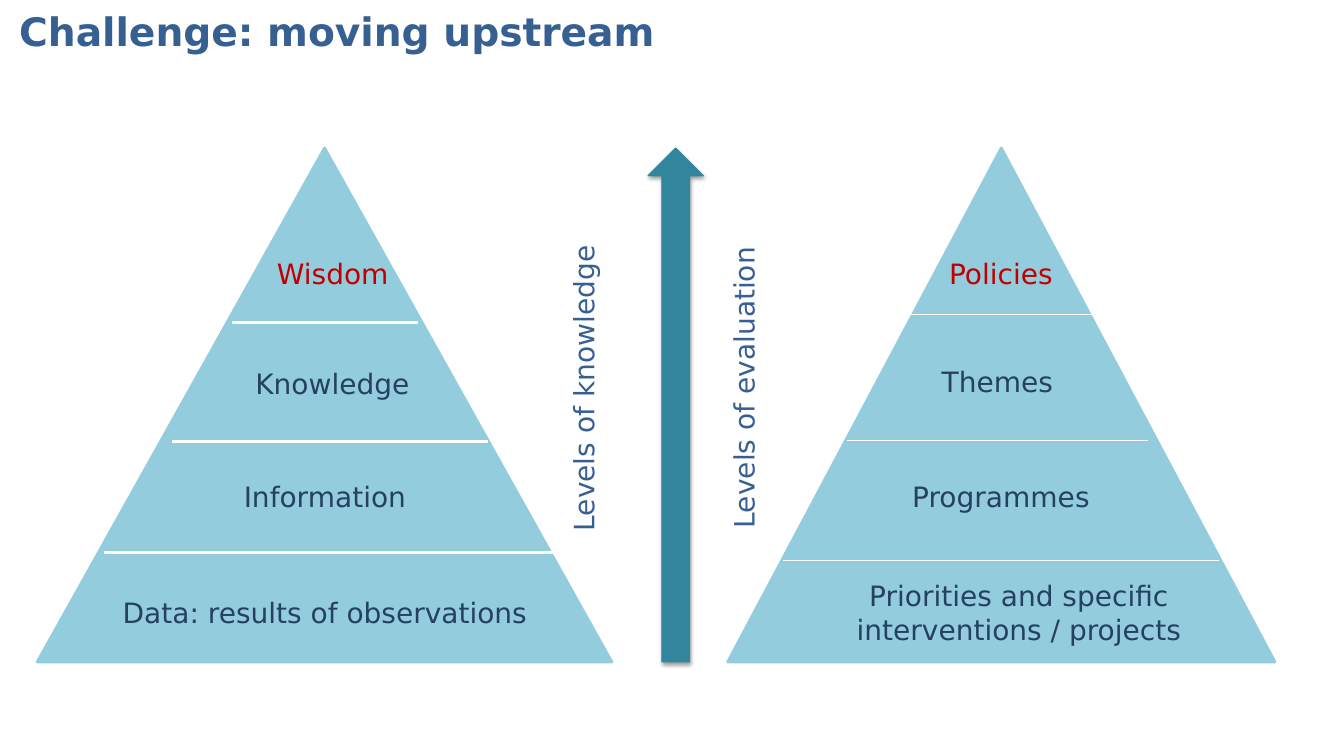
from dataclasses import dataclass
from typing import Any, NamedTuple

from lxml.etree import SubElement
from pptx import Presentation
from pptx.dml.color import RGBColor
from pptx.enum.shapes import MSO_CONNECTOR as Connector, MSO_SHAPE as Shape
from pptx.enum.text import MSO_ANCHOR as Anchor, MSO_AUTO_SIZE as AutoSize, PP_ALIGN as Align
from pptx.oxml.ns import qn
from pptx.util import Cm, Pt


@dataclass(frozen=True)
class Theme:
    font: str = "DejaVu Sans"
    title_size: float = 28
    label_size: float = 20
    heading: str = "376092"
    label: str = "254061"
    peak: str = "C00000"
    pyramid: str = "93CDDD"
    arrow: str = "31859C"
    divider: str = "FFFFFF"
    shadow: str = "000000"


THEME = Theme()
PYRAMID_TOP, PYRAMID_HEIGHT = 3.73, 12.95
LABEL_HEIGHT = 1.12


class Box(NamedTuple):
    left: float
    top: float
    width: float
    height: float = LABEL_HEIGHT

    def lengths(self) -> tuple[Cm, ...]:
        return tuple(Cm(value) for value in self)


class Level(NamedTuple):
    text: str
    box: Box
    color: str = THEME.label


class Divider(NamedTuple):
    start: float
    end: float
    y: float


@dataclass(frozen=True)
class Pyramid:
    left: float
    width: float
    divider_weight: float
    dividers: tuple[Divider, ...]
    levels: tuple[Level, ...]
    axis: Level


KNOWLEDGE = Pyramid(
    left=0.94, width=14.48, divider_weight=1.75,
    dividers=(Divider(5.84, 10.54, 8.13), Divider(4.34, 12.29, 11.13),
              Divider(2.62, 14.15, 13.92)),
    levels=(
        Level("Wisdom", Box(5.16, 6.35, 6.45), THEME.peak),
        Level("Knowledge", Box(4.47, 9.12, 7.82)),
        Level("Information", Box(3.07, 11.96, 10.24)),
        Level("Data: results of observations", Box(2.46, 14.88, 11.46)),
    ),
    axis=Level("Levels of knowledge", Box(14.15, 3.12, 1.37, 10.52), THEME.heading),
)
EVALUATION = Pyramid(
    left=18.34, width=13.79, divider_weight=0.75,
    dividers=(Divider(22.81, 27.53, 7.92), Divider(21.34, 28.93, 11.1),
              Divider(19.74, 30.73, 14.12)),
    levels=(
        Level("Policies", Box(22.81, 6.35, 4.83), THEME.peak),
        Level("Themes", Box(22.2, 9.07, 5.87)),
        Level("Programmes", Box(21.39, 11.96, 7.67)),
        Level("Priorities and specific interventions / projects",
              Box(20.83, 14.45, 9.7, 1.96)),
    ),
    axis=Level("Levels of evaluation", Box(18.19, 5.13, 1.37, 8.43), THEME.heading),
)


def apply_format(target: Any, values: dict[str, Any]) -> None:
    for name, value in values.items():
        setattr(target, name, value)


def write(frame: Any, text: str, color: str, size: float, align: Align, bold: bool = False) -> None:
    paragraph = frame.paragraphs[0]
    paragraph.alignment = align
    run = paragraph.add_run()
    run.text = text
    apply_format(run.font, {"name": THEME.font, "size": Pt(size), "bold": bold})
    run.font.color.rgb = RGBColor.from_string(color)


def add_title(slide: Any, text: str) -> None:
    title = slide.shapes.title
    box = Box(0.23, -0.05, 29.21, 1.78).lengths()
    apply_format(title, dict(zip(Box._fields, box)))
    apply_format(title.text_frame, {"auto_size": AutoSize.NONE, "word_wrap": True,
                                    "vertical_anchor": Anchor.MIDDLE})
    write(title.text_frame, text, THEME.heading, THEME.title_size, Align.LEFT, bold=True)
    title.text_frame.paragraphs[0].line_spacing = 0.9


def add_label(slide: Any, level: Level, upward: bool = False) -> None:
    frame = slide.shapes.add_textbox(*level.box.lengths()).text_frame
    apply_format(frame, {"word_wrap": True, "auto_size": AutoSize.SHAPE_TO_FIT_TEXT})
    if upward:
        frame._txBody.bodyPr.set("vert", "vert270")
    write(frame, level.text, level.color, THEME.label_size,
          Align.LEFT if upward else Align.CENTER)


def add_solid(slide: Any, kind: Shape, box: Box, color: str, weight: float) -> Any:
    solid = slide.shapes.add_shape(kind, *box.lengths())
    solid.shadow.inherit = False
    solid.fill.solid()
    solid.fill.fore_color.rgb = solid.line.color.rgb = RGBColor.from_string(color)
    solid.line.width = Pt(weight)
    return solid


def add_divider(slide: Any, divider: Divider, weight: float) -> None:
    y = Cm(divider.y)
    line = slide.shapes.add_connector(
        Connector.STRAIGHT, Cm(divider.start), y, Cm(divider.end), y)
    line.line.color.rgb = RGBColor.from_string(THEME.divider)
    line.line.width = Pt(weight)
    SubElement(line._element.spPr, qn("a:effectLst"))


def add_pyramid(slide: Any, pyramid: Pyramid) -> None:
    box = Box(pyramid.left, PYRAMID_TOP, pyramid.width, PYRAMID_HEIGHT)
    add_solid(slide, Shape.FLOWCHART_EXTRACT, box, THEME.pyramid, 2)
    for divider in pyramid.dividers:
        add_divider(slide, divider, pyramid.divider_weight)
    for level in pyramid.levels:
        add_label(slide, level)
    add_label(slide, pyramid.axis, upward=True)


def add_upstream_arrow(slide: Any) -> None:
    box = Box(16.33, PYRAMID_TOP, 1.4, PYRAMID_HEIGHT)
    arrow = add_solid(slide, Shape.UP_ARROW, box, THEME.arrow, 0.75)
    effects = arrow._element.spPr.find(qn("a:effectLst"))
    shadow = SubElement(effects, qn("a:outerShdw"), blurRad=str(Pt(3.1)), dist=str(Pt(1.6)),
                        dir="5400000", rotWithShape="0")
    shade = SubElement(shadow, qn("a:srgbClr"), val=THEME.shadow)
    SubElement(shade, qn("a:alpha"), val="38000")


def main() -> None:
    deck = Presentation()
    deck.slide_width, deck.slide_height = Cm(33.87), Cm(19.05)
    slide = deck.slides.add_slide(deck.slide_layouts.get_by_name("Title Only"))
    add_title(slide, "Challenge: moving upstream")
    for pyramid in (KNOWLEDGE, EVALUATION):
        add_pyramid(slide, pyramid)
    add_upstream_arrow(slide)
    deck.save("out.pptx")


if __name__ == "__main__":
    main()
